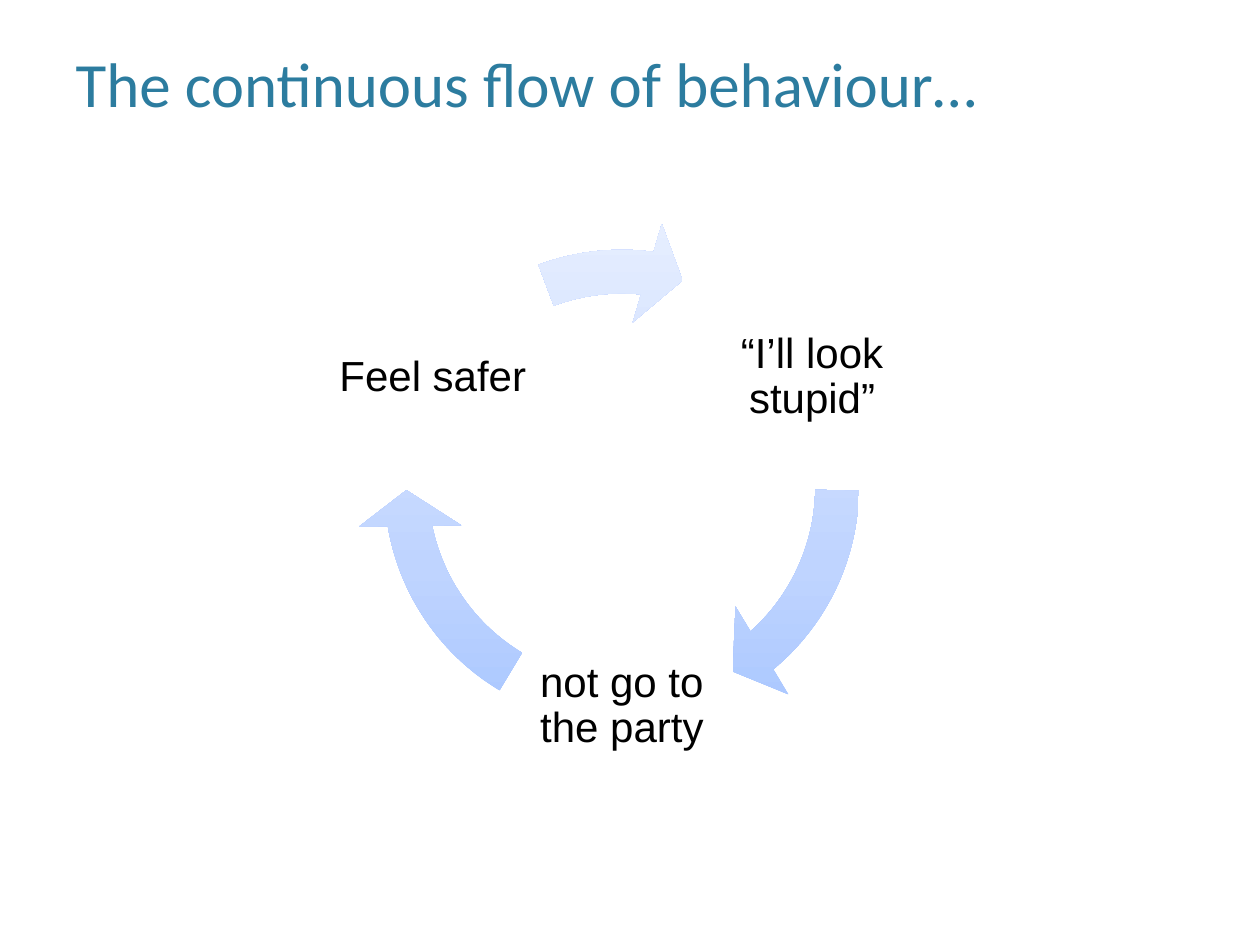
from copy import deepcopy

from pptx import Presentation
from pptx.dml.color import RGBColor
from pptx.enum.shapes import MSO_SHAPE
from pptx.enum.text import MSO_ANCHOR, PP_ALIGN
from pptx.oxml.ns import qn
from pptx.util import Inches, Pt

STOPS = [(0, "A4C4FF"), (0.35, "BFD4FF"), (1, "E6EEFF")]
STEPS = [
    ("“I’ll look stupid”", 5.43, 2.1, 2.03, 0.86, 49.4),
    ("not go to the party", 4.04, 4.71, 1.79, 121, 169.54),
    ("Feel safer", 2.54, 2.1, 1.79, 249.45, 276.82),
]


def tint(code):
    return RGBColor.from_string(code)


def add_run(para, text, face, size, color):
    run = para.add_run()
    run.text = text
    run.font.name = face
    run.font.size = Pt(size)
    run.font.color.rgb = tint(color)


def add_title(slide, text):
    title = slide.shapes.title
    title.left, title.top = Inches(0.5), Inches(0.3)
    title.width, title.height = Inches(9), Inches(1.25)
    frame = title.text_frame
    frame.vertical_anchor = MSO_ANCHOR.TOP
    para = frame.paragraphs[0]
    para.alignment = PP_ALIGN.LEFT
    add_run(para, text, "Calibri", 36, "2C7C9F")


def add_label(group, text, left, top, width):
    box = group.shapes.add_textbox(
        Inches(left), Inches(top), Inches(width), Inches(1.79))
    frame = box.text_frame
    frame.word_wrap = True
    frame.vertical_anchor = MSO_ANCHOR.MIDDLE
    frame.margin_left = frame.margin_right = Inches(0.03)
    frame.margin_top = frame.margin_bottom = Inches(0.03)
    para = frame.paragraphs[0]
    para.alignment = PP_ALIGN.CENTER
    para.line_spacing = 0.9
    add_run(para, text, "Arial", 24, "000000")


def add_arrow(group, start, end):
    arrow = group.shapes.add_shape(
        MSO_SHAPE.CIRCULAR_ARROW,
        Inches(2.82), Inches(1.75), Inches(4.23), Inches(4.23))
    arrow.shadow.inherit = False
    arrow.line.fill.background()
    values = [0.082, 9.6 * 0.6, end * 0.6, start * 0.6, 0.096]
    for i, value in enumerate(values):
        arrow.adjustments[i] = value
    fill = arrow.fill
    fill.gradient()
    fill.gradient_angle = 90
    first = arrow._element.spPr.find(".//" + qn("a:gs"))
    first.addnext(deepcopy(first))
    for stop, (place, color) in zip(fill.gradient_stops, STOPS):
        stop.position = place
        stop.color.rgb = tint(color)


def main():
    deck = Presentation()
    deck.slide_width, deck.slide_height = Inches(10), Inches(7.5)
    slide = deck.slides.add_slide(deck.slide_layouts[5])
    add_title(slide, "The continuous flow of behaviour…")
    group = slide.shapes.add_group_shape()
    for text, left, top, width, start, end in STEPS:
        add_label(group, text, left, top, width)
        add_arrow(group, start, end)
    deck.save("out.pptx")


if __name__ == "__main__":
    main()
